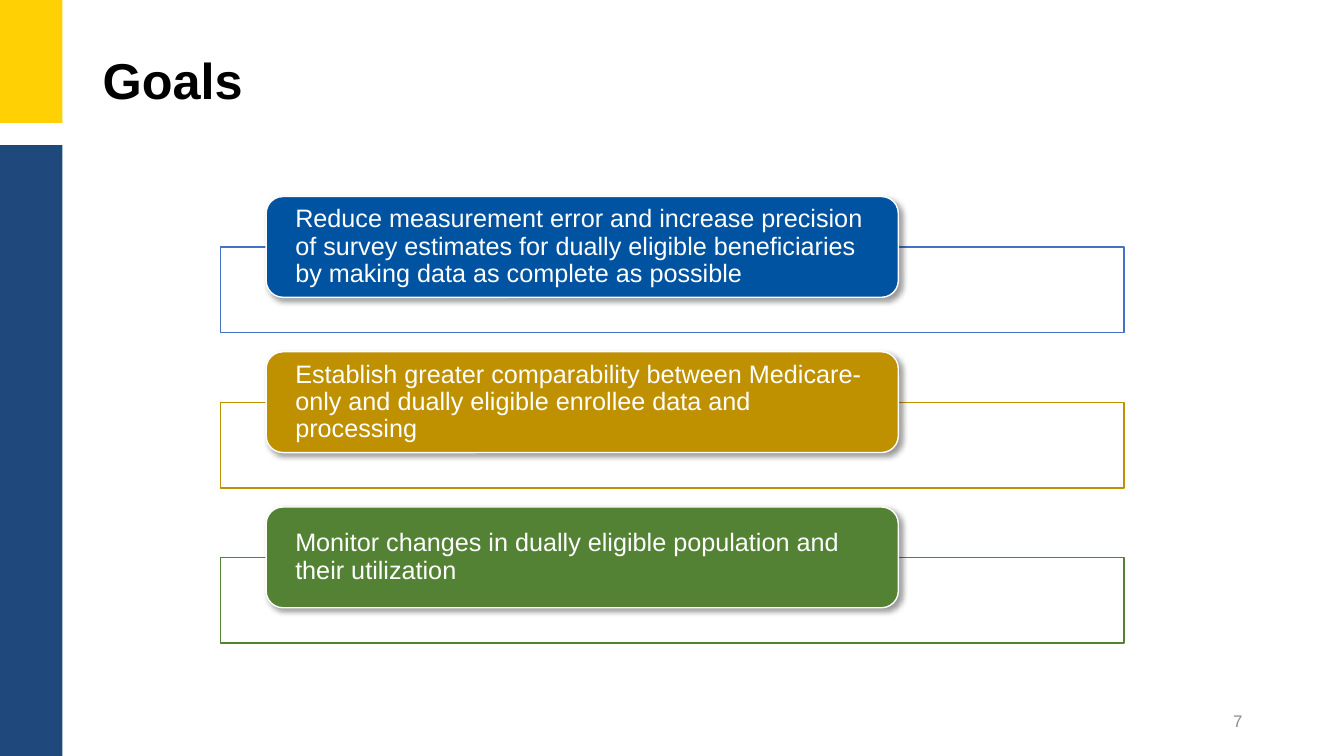
from lxml import etree
from pptx import Presentation
from pptx import util as u
from pptx.dml.color import RGBColor
from pptx.enum import shapes, text
from pptx.oxml import ns

GOALS = [
    ("Reduce measurement error and increase precision of survey estimates "
     "for dually eligible beneficiaries by making data as complete as possible",
     "0053A0", "4472C4"),
    ("Establish greater comparability between Medicare-only and dually "
     "eligible enrollee data and processing", "BF9000", "BF9000"),
    ("Monitor changes in dually eligible population and their utilization",
     "548235", "548235"),
]
FIRST_CARD_TOP = 1.95
GOAL_STEP = 1.54
FRAME_DROP = 0.5


def color(value):
    return RGBColor.from_string(value)


def write(shape, words, size=18, fill="000000", bold=False,
          align=text.PP_ALIGN.LEFT, line_spacing=None, insets=(0.1, 0.05)):
    """Fill a shape with one vertically centred paragraph."""
    frame = shape.text_frame
    frame.word_wrap = True
    frame.vertical_anchor = text.MSO_ANCHOR.MIDDLE
    frame.margin_left = frame.margin_right = u.Inches(insets[0])
    frame.margin_top = frame.margin_bottom = u.Inches(insets[1])
    para = frame.paragraphs[0]
    para.alignment = align
    para.line_spacing = line_spacing
    span = para.add_run()
    span.text = words
    span.font.name = SlideBuilder.font
    span.font.size = u.Pt(size)
    span.font.bold = bold
    span.font.color.rgb = color(fill)


class SlideBuilder:
    font = "Arial"

    def __init__(self, deck):
        self.slide = deck.slides.add_slide(deck.slide_layouts[6])

    def block(self, place, fill, line=None,
              kind=shapes.MSO_SHAPE.RECTANGLE):
        shape = self.slide.shapes.add_shape(kind, *map(u.Inches, place))
        shape.shadow.inherit = False
        shape.fill.solid()
        shape.fill.fore_color.rgb = color(fill)
        if line:
            shape.line.color.rgb = color(line)
            shape.line.width = u.Pt(1)
        else:
            shape.line.fill.background()
        return shape

    def label(self, place, words, **style):
        box = self.slide.shapes.add_textbox(*map(u.Inches, place))
        write(box, words, **style)

    def drop_shadow(self, shape):
        effects = shape.element.spPr.find(ns.qn("a:effectLst"))
        shadow = etree.SubElement(
            effects, ns.qn("a:outerShdw"), blurRad=str(u.Pt(4)),
            dist=str(u.Pt(3)), dir=str(45 * 60000), algn="tl", rotWithShape="0")
        black = etree.SubElement(shadow, ns.qn("a:srgbClr"), val="000000")
        etree.SubElement(black, ns.qn("a:alpha"), val="40000")

    def goal(self, top, words, fill, frame_line):
        """Draw an outlined frame with a rounded card over its top edge."""
        self.block((2.19, top + FRAME_DROP, 8.96, 0.85), "FFFFFF", frame_line)
        card = self.block((2.64, top, 6.27, 1), fill, "FFFFFF",
                          shapes.MSO_SHAPE.ROUNDED_RECTANGLE)
        self.drop_shadow(card)
        write(card, words, fill="FFFFFF", line_spacing=0.9, insets=(0.24, 0))


def main():
    deck = Presentation()
    deck.slide_width = u.Inches(13.33)
    deck.slide_height = u.Inches(7.5)
    page = SlideBuilder(deck)

    page.block((0, 0, 0.62, 1.22), "FFD004")
    page.block((0, 1.44, 0.62, 6.06), "1F497D")
    page.label((0.92, 0.22, 11.5, 1.21), "Goals", size=36, bold=True,
               line_spacing=0.9)
    page.label((9.42, 6.95, 3, 0.4), "7", size=12, fill="8C8C8C",
               align=text.PP_ALIGN.RIGHT)
    for index, (words, fill, frame_line) in enumerate(GOALS):
        page.goal(FIRST_CARD_TOP + index * GOAL_STEP, words, fill, frame_line)

    deck.save("out.pptx")


if __name__ == "__main__":
    main()
